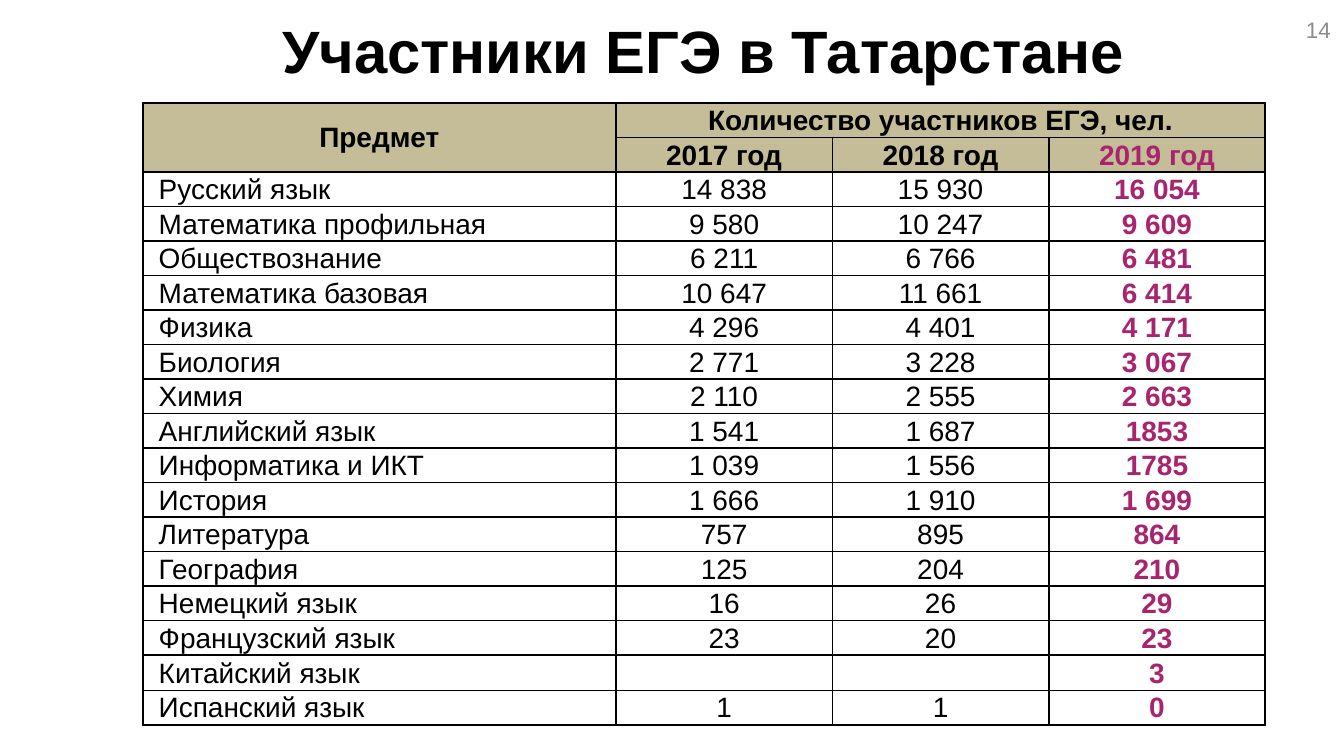
from lxml.etree import SubElement
from pptx import Presentation
from pptx.dml.color import RGBColor
from pptx.enum.text import MSO_ANCHOR, MSO_AUTO_SIZE, PP_ALIGN
from pptx.oxml.ns import qn
from pptx.util import Cm, Pt

# Content
TITLE = "Участники ЕГЭ в Татарстане"
NUMBER = "14"
HEAD = [
    ("Предмет", "Количество участников ЕГЭ, чел.", "", ""),
    ("", "2017 год", "2018 год", "2019 год"),
]
BODY = [
    ("Русский язык", "14 838", "15 930", "16 054"),
    ("Математика профильная", "9 580", "10 247", "9 609"),
    ("Обществознание", "6 211", "6 766", "6 481"),
    ("Математика базовая", "10 647", "11 661", "6 414"),
    ("Физика", "4 296", "4 401", "4 171"),
    ("Биология", "2 771", "3 228", "3 067"),
    ("Химия", "2 110", "2 555", "2 663"),
    ("Английский язык", "1 541", "1 687", "1853"),
    ("Информатика и ИКТ", "1 039", "1 556", "1785"),
    ("История", "1 666", "1 910", "1 699"),
    ("Литература", "757", "895", "864"),
    ("География", "125", "204", "210"),
    ("Немецкий язык", "16", "26", "29"),
    ("Французcкий язык", "23", "20", "23"),
    ("Китайский язык", "", "", "3"),
    ("Испанский язык", "1", "1", "0"),
]

# Theme
THEME = {
    "font": "Arial",
    "ink": "000000", "accent": "A8246E", "muted": "8C8C8C", "head": "C4BD97",
    "title": 32, "cell": 15, "number": 12, "line": 1,
}
COLS = (8.94, 4.09, 4.09, 4.09)
ROW = 0.652
PAD = 0.02
INDENT = 0.3


def assign(item, **values):
    for name, value in values.items():
        setattr(item, name, value)


def write(frame, text, size, color="ink", bold=False, align=PP_ALIGN.CENTER):
    para = frame.paragraphs[0]
    para.alignment = align
    if not text:
        # An empty cell keeps the type size, so its row stays low
        SubElement(para._p, qn("a:endParaRPr"), sz=str(THEME[size] * 100))
        return
    run = para.add_run()
    run.text = text
    assign(run.font, name=THEME["font"], size=Pt(THEME[size]), bold=bold)
    run.font.color.rgb = RGBColor.from_string(THEME[color])


def border(cell):
    props = cell._tc.get_or_add_tcPr()
    for side in ("lnL", "lnR", "lnT", "lnB"):
        line = SubElement(props, qn(f"a:{side}"), w=str(Pt(THEME["line"])))
        fill = SubElement(line, qn("a:solidFill"))
        SubElement(fill, qn("a:srgbClr"), val=THEME["ink"])


def main():
    deck = Presentation()
    assign(deck, slide_width=Cm(25.4), slide_height=Cm(14.29))
    slide = deck.slides.add_slide(deck.slide_layouts[5])

    # Title
    title = slide.shapes.title
    assign(title, left=Cm(3.3), top=Cm(0.13), width=Cm(20), height=Cm(1.63))
    assign(title.text_frame, word_wrap=True, vertical_anchor=MSO_ANCHOR.TOP,
           auto_size=MSO_AUTO_SIZE.NONE)
    write(title.text_frame, TITLE, "title", bold=True)

    # Table grid
    rows = HEAD + BODY
    table = slide.shapes.add_table(
        len(rows), len(COLS), Cm(2.7), Cm(1.95),
        Cm(sum(COLS)), Cm(ROW * len(rows))).table
    assign(table, first_row=False, horz_banding=False)
    for col, width in zip(table.columns, COLS):
        col.width = Cm(width)
    for row in table.rows:
        row.height = Cm(ROW)

    # Table cells
    last = len(COLS) - 1
    for r, row in enumerate(rows):
        head = r < len(HEAD)
        for c, text in enumerate(row):
            cell = table.cell(r, c)
            label = c == 0 and not head
            assign(cell, vertical_anchor=MSO_ANCHOR.MIDDLE,
                   margin_left=Cm(INDENT if label else PAD),
                   margin_right=Cm(PAD), margin_top=Cm(PAD), margin_bottom=0)
            border(cell)
            if head:
                cell.fill.solid()
                cell.fill.fore_color.rgb = RGBColor.from_string(THEME["head"])
            else:
                cell.fill.background()
            write(cell.text_frame, text, "cell",
                  color="accent" if c == last else "ink",
                  bold=head or c == last,
                  align=PP_ALIGN.LEFT if label else PP_ALIGN.CENTER)
    table.cell(0, 0).merge(table.cell(1, 0))
    table.cell(0, 1).merge(table.cell(0, last))

    # Slide number
    box = slide.shapes.add_textbox(Cm(19.48), Cm(0.05), Cm(5.92), Cm(1.02))
    assign(box.text_frame, word_wrap=True, vertical_anchor=MSO_ANCHOR.MIDDLE)
    write(box.text_frame, NUMBER, "number", color="muted", align=PP_ALIGN.RIGHT)

    deck.save("out.pptx")


if __name__ == "__main__":
    main()
